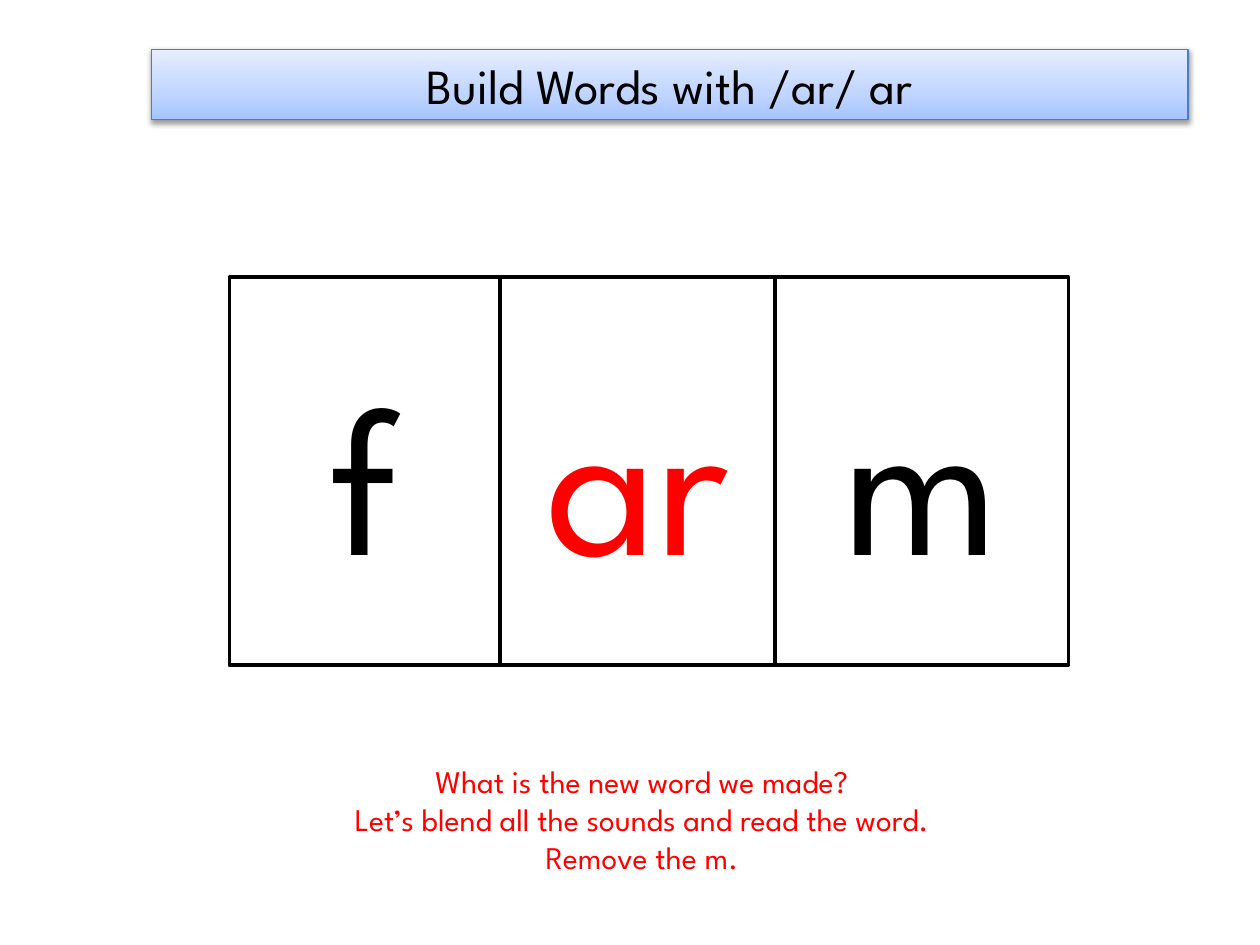
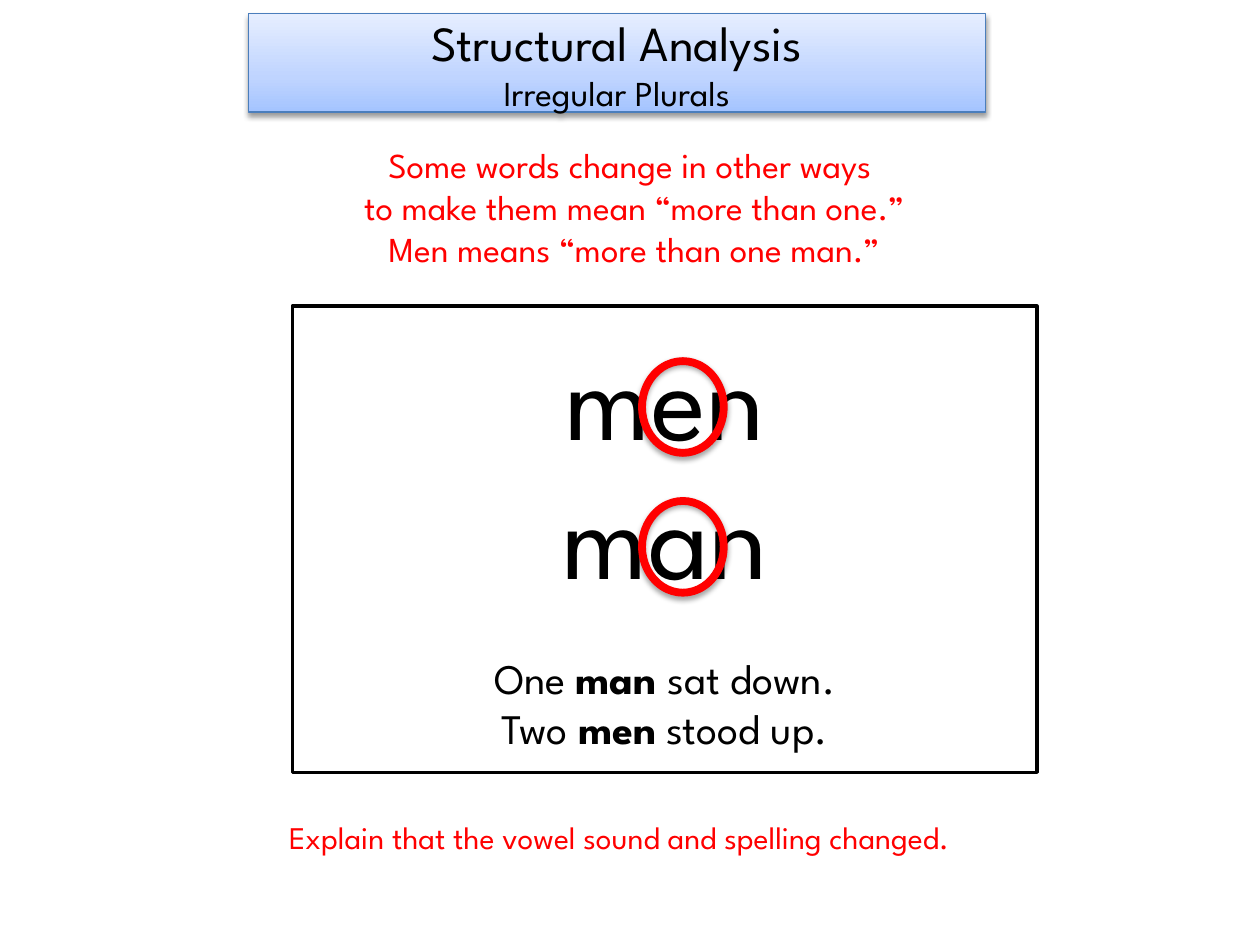
from copy import deepcopy

from pptx import Presentation
from pptx import util as u
from pptx.dml.color import RGBColor
from pptx.enum import shapes, text
from pptx.oxml import parse_xml
from pptx.oxml.ns import nsdecls, qn

FONT = "League Spartan"
COLORS = {
    "ink": "000000",
    "paper": "FFFFFF",
    "accent": "FF0000",
    "band_line": "4B7EBC",
}
BAND_STOPS = [(0, "A4C4FF"), (0.35, "BFD4FF"), (1, "E6EEFF")]


def color(name):
    return RGBColor.from_string(COLORS[name])


def place(item, left, top, width, height):
    values = {"left": left, "top": top, "width": width, "height": height}
    for name, value in values.items():
        setattr(item, name, u.Inches(value))


def set_outline(item, line, width):
    item.line.color.rgb = color(line)
    item.line.width = u.Pt(width)


def add_shadow(item, opacity, distance):
    item.shadow.inherit = False
    effects = item._element.spPr.find(qn("a:effectLst"))
    effects.append(parse_xml(
        f'<a:outerShdw {nsdecls("a")} blurRad="{u.Pt(3.1)}" dist="{u.Pt(distance)}" '
        f'dir="5400000" rotWithShape="0"><a:srgbClr val="{COLORS["ink"]}">'
        f'<a:alpha val="{opacity * 1000}"/></a:srgbClr></a:outerShdw>'))


def write_lines(item, lines, size, ink="ink"):
    frame = item.text_frame
    frame.word_wrap = True
    for index, line in enumerate(lines):
        para = frame.add_paragraph() if index else frame.paragraphs[0]
        para.alignment = text.PP_ALIGN.CENTER
        spans = [(line, {})] if isinstance(line, str) else line
        for words, changes in spans:
            span = para.add_run()
            span.text = words
            formats = {"name": FONT, "size": u.Pt(size), "bold": False, **changes}
            for name, value in formats.items():
                setattr(span.font, name, value)
            span.font.color.rgb = color(ink)
    return frame


def add_title_slide(deck, bounds, lines):
    slide = deck.slides.add_slide(deck.slide_layouts[5])
    band = slide.shapes.title
    place(band, *bounds)
    band.fill.gradient()
    band.fill.gradient_angle = 90
    stop_list = band._element.spPr.find(".//" + qn("a:gsLst"))
    stop_list.insert(1, deepcopy(stop_list[0]))
    for stop, (position, shade) in zip(band.fill.gradient_stops, BAND_STOPS):
        stop.position = position
        stop.color.rgb = RGBColor.from_string(shade)
    set_outline(band, "band_line", 0.75)
    add_shadow(band, 38, 1.6)
    frame = write_lines(band, lines, 28)
    frame.auto_size = text.MSO_AUTO_SIZE.NONE
    frame.vertical_anchor = text.MSO_ANCHOR.MIDDLE
    return slide


def add_card(slide, bounds, lines, size, ink="ink"):
    card = slide.shapes.add_shape(shapes.MSO_SHAPE.RECTANGLE, *map(u.Inches, bounds))
    card.fill.solid()
    card.fill.fore_color.rgb = color("paper")
    set_outline(card, "ink", 2)
    card.shadow.inherit = False
    frame = write_lines(card, lines, size, ink)
    frame.vertical_anchor = text.MSO_ANCHOR.MIDDLE
    return frame


def add_prompt(slide, bounds, lines, size):
    box = slide.shapes.add_textbox(*map(u.Inches, bounds))
    frame = write_lines(box, lines, size, "accent")
    frame.auto_size = text.MSO_AUTO_SIZE.SHAPE_TO_FIT_TEXT


def add_vowel_ring(slide, left, top):
    ring = slide.shapes.add_shape(
        shapes.MSO_SHAPE.DONUT, *map(u.Inches, (left, top, 0.7, 0.78)))
    ring.adjustments[0] = 0.074
    ring.fill.solid()
    ring.fill.fore_color.rgb = color("accent")
    set_outline(ring, "accent", 0.75)
    add_shadow(ring, 35, 1.8)


def build_word_slide(deck):
    slide = add_title_slide(deck, (1.2, 0.39, 8.23, 0.56), ["Build Words with /ar/ ar"])
    left = 1.82
    for sound, width, ink in [("f", 2.15, "ink"), ("ar", 2.18, "accent"), ("m", 2.33, "ink")]:
        add_card(slide, (left, 2.2, width, 3.08), [sound], 120, ink)
        left += width
    add_prompt(slide, (1.61, 6, 6.97, 1.01), [
        "What is the new word we made?",
        "Let’s blend all the sounds and read the word.",
        "Remove the m.",
    ], 18)


def build_plurals_slide(deck):
    slide = add_title_slide(deck, (1.97, 0.11, 5.85, 0.78), [
        "Structural Analysis",
        [("Irregular Plurals", {"size": u.Pt(20)})],
    ])
    plain = {"size": u.Pt(24)}
    strong = {**plain, "bold": True}
    card = add_card(slide, (2.32, 2.43, 5.91, 3.7), [
        "men",
        "man",
        [("One ", plain), ("man ", strong), ("sat down.", plain)],
        [("Two ", plain), ("men", strong), (" stood up.", plain)],
    ], 66)
    card.paragraphs[2].space_before = u.Pt(28.6)
    add_prompt(slide, (0.38, 1.09, 9.31, 1.11), [
        "Some words change in other ways ",
        "to make them mean “more than one.”",
        "Men means “more than one man.”",
    ], 20)
    for row in range(2):
        add_vowel_ring(slide, 5.07, 2.84 + row * 1.11)
    add_prompt(slide, (0.78, 6.44, 8.27, 0.4),
               ["Explain that the vowel sound and spelling changed."], 18)


def main():
    deck = Presentation()
    deck.slide_width = u.Inches(10)
    deck.slide_height = u.Inches(7.5)
    build_word_slide(deck)
    build_plurals_slide(deck)
    deck.save("out.pptx")


if __name__ == "__main__":
    main()
